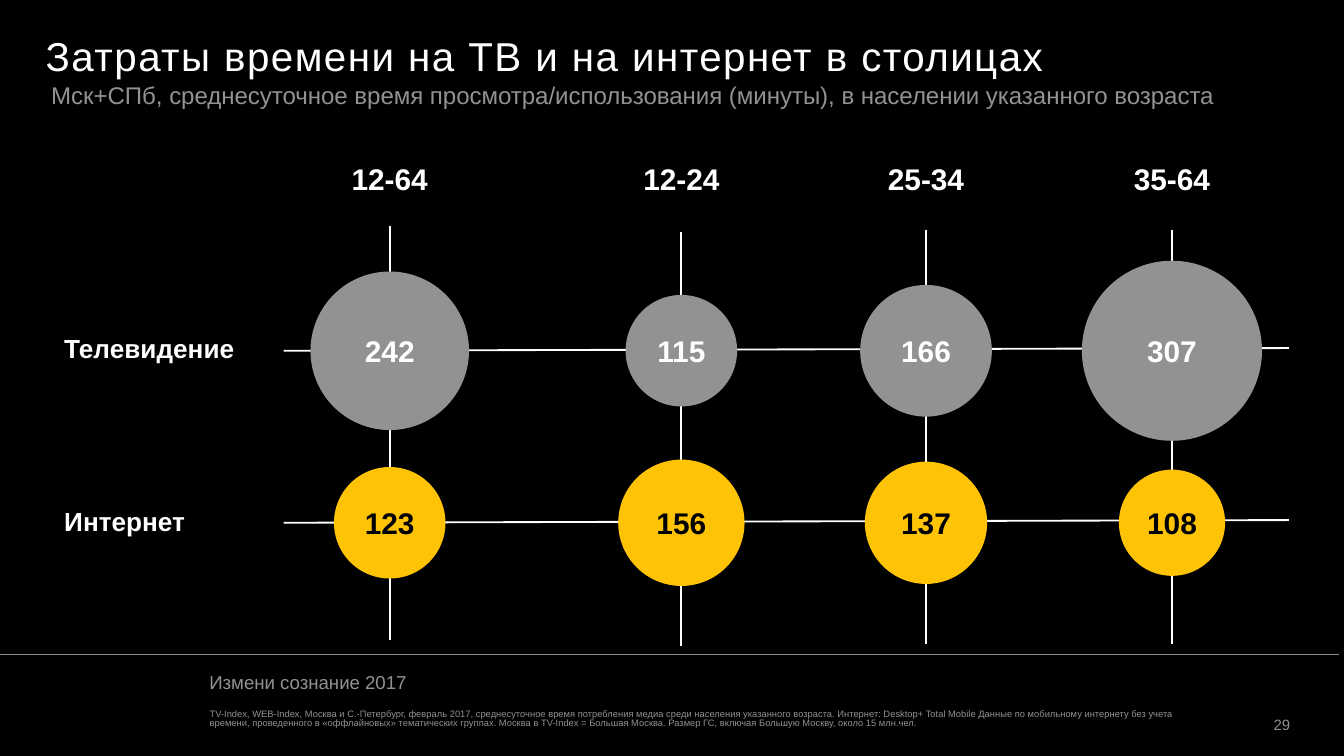
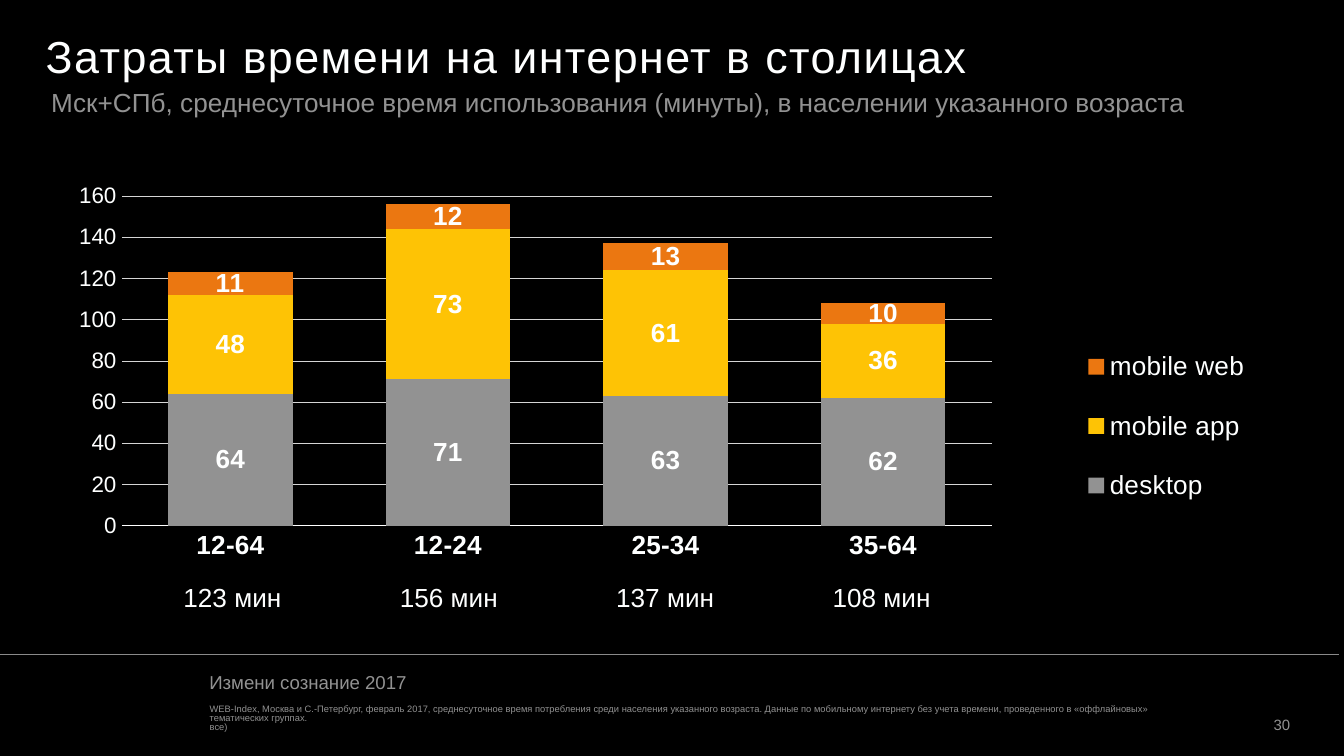
from dataclasses import dataclass

from lxml import etree
from pptx import Presentation
from pptx.chart.data import CategoryChartData
from pptx.dml.color import RGBColor
from pptx.enum.chart import XL_CHART_TYPE, XL_LABEL_POSITION, XL_LEGEND_POSITION, XL_TICK_MARK
from pptx.enum.shapes import MSO_CONNECTOR, MSO_SHAPE
from pptx.enum.text import MSO_ANCHOR, MSO_AUTO_SIZE, PP_ALIGN
from pptx.oxml.ns import qn
from pptx.util import Inches, Pt

LEFT, CENTER, RIGHT = PP_ALIGN.LEFT, PP_ALIGN.CENTER, PP_ALIGN.RIGHT
TOP, MIDDLE, BOTTOM = MSO_ANCHOR.TOP, MSO_ANCHOR.MIDDLE, MSO_ANCHOR.BOTTOM
NO_TICK = XL_TICK_MARK.NONE
COMPARISON_LAYOUT = 4
DEFAULT_INSETS = (0.1, 0.05, 0.1, 0.05)
NO_INSETS = (0, 0, 0, 0)


@dataclass(frozen=True)
class Theme:
    font: str = "Arial"
    black: str = "000000"
    white: str = "FEFFFF"
    gray: str = "929292"
    yellow: str = "FEC305"
    orange: str = "EB7711"
    footer_rule: str = "8A8A8A"
    grid: str = "D5D5D5"
    axis: str = "FFFFFF"
    source_size: float = 5
    number_size: float = 8
    footer_size: float = 10
    axis_size: float = 12
    label_size: float = 14
    value_size: float = 16


THEME = Theme()

AGES = ("12-64", "12-24", "25-34", "35-64")

# Column centre and top of its vertical line
COLUMNS = ((2.9, 1.68), (5.07, 1.73), (6.89, 1.71), (8.72, 1.71))
COLUMN_LENGTH = 3.08

# Name, label top, centre, circle fill, text colour, (minutes, diameter) by age
MEDIA_ROWS = (
    ("Телевидение", 2.45, 2.61, THEME.gray, THEME.white,
     ((242, 1.18), (115, 0.83), (166, 0.98), (307, 1.34))),
    ("Интернет", 3.74, 3.89, THEME.yellow, THEME.black,
     ((123, 0.83), (156, 0.94), (137, 0.91), (108, 0.79))),
)

DEVICES = (
    ("desktop", (64, 71, 63, 62), THEME.gray),
    ("mobile app", (48, 73, 61, 36), THEME.yellow),
    ("mobile web", (11, 12, 13, 10), THEME.orange),
)


def color(value):
    return RGBColor.from_string(value)


def set_layout(parent, index, x, y, width, height, inner=False):
    """Give a chart part a fixed place, in fractions of the chart."""
    for old in parent.findall(qn("c:layout")):
        parent.remove(old)
    layout = etree.Element(qn("c:layout"))
    manual = etree.SubElement(layout, qn("c:manualLayout"))
    entries = [("layoutTarget", "inner")] if inner else []
    entries += [("xMode", "edge"), ("yMode", "edge"),
                ("x", x), ("y", y), ("w", width), ("h", height)]
    for name, value in entries:
        etree.SubElement(manual, qn(f"c:{name}")).set("val", str(value))
    parent.insert(index, layout)


class Deck:
    def __init__(self, theme):
        self.theme = theme
        self.slide = None
        self.presentation = Presentation()
        self.presentation.slide_width = Inches(10)
        self.presentation.slide_height = Inches(5.625)
        background = self.presentation.slide_master.background.fill
        background.solid()
        background.fore_color.rgb = color(theme.black)

    def style_font(self, font, size, font_color, bold=False):
        font.name = self.theme.font
        font.size = Pt(size)
        font.bold = bold
        font.color.rgb = color(font_color)

    def fill_text(self, shape, text, size, font_color, bold=False, align=LEFT, anchor=TOP,
                  insets=DEFAULT_INSETS, indent=0, spacing=1.0, wrap=True):
        frame = shape.text_frame
        frame.text = text
        frame.auto_size = MSO_AUTO_SIZE.NONE
        frame.word_wrap = wrap
        frame.vertical_anchor = anchor
        (frame.margin_left, frame.margin_top,
         frame.margin_right, frame.margin_bottom) = map(Inches, insets)
        for paragraph in frame.paragraphs:
            properties = paragraph._p.get_or_add_pPr()
            properties.set("marL", str(Inches(indent)))
            properties.set("indent", "0")
            paragraph.alignment = align
            paragraph.line_spacing = spacing
            paragraph.space_before = Pt(0)
            self.style_font(paragraph.font, size, font_color, bold)

    def place(self, shape, left, top, width, height):
        shape.left, shape.top = Inches(left), Inches(top)
        shape.width, shape.height = Inches(width), Inches(height)

    def text(self, text, left, top, width, height, size, font_color, **options):
        box = self.slide.shapes.add_textbox(
            Inches(left), Inches(top), Inches(width), Inches(height))
        self.fill_text(box, text, size, font_color, **options)

    def line(self, start, end, line_color, width):
        connector = self.slide.shapes.add_connector(
            MSO_CONNECTOR.STRAIGHT, *map(Inches, (*start, *end)))
        connector.line.color.rgb = color(line_color)
        connector.line.width = Pt(width)
        etree.SubElement(connector._element.spPr, qn("a:effectLst"))

    def circle(self, text, center_x, center_y, diameter, fill, font_color):
        circle = self.slide.shapes.add_shape(
            MSO_SHAPE.OVAL, Inches(center_x - diameter / 2),
            Inches(center_y - diameter / 2), Inches(diameter), Inches(diameter))
        circle.shadow.inherit = False
        circle.fill.solid()
        circle.fill.fore_color.rgb = color(fill)
        circle.line.fill.background()
        self.fill_text(circle, text, self.theme.value_size, font_color, bold=True,
                       align=CENTER, anchor=MIDDLE, insets=NO_INSETS)

    def new_slide(self, number, title, title_size, subtitle, subtitle_size,
                  source, subtitle_spacing=1.0):
        theme = self.theme
        layout = self.presentation.slide_layouts[COMPARISON_LAYOUT]
        self.slide = self.presentation.slides.add_slide(layout)
        heading, subheading, content, note, extra = self.slide.placeholders
        for unused in (content, extra):
            unused._element.getparent().remove(unused._element)

        # Title and subtitle
        self.place(heading, 0, 0, 10, 0.59)
        self.fill_text(heading, title, title_size, theme.white, anchor=MIDDLE,
                       insets=(0.3, 0.23, 0.3, 0), indent=0.04)
        for run in heading.text_frame.paragraphs[0].runs:
            run._r.get_or_add_rPr().set("spc", "80")
        self.place(subheading, 0, 0.59, 10, 0.28)
        self.fill_text(subheading, subtitle, subtitle_size, theme.gray,
                       indent=0.28, spacing=subtitle_spacing)

        # Footer
        self.line((0, 4.87), (9.96, 4.87), theme.footer_rule, 0.25)
        self.text("Измени сознание 2017", 1.46, 4.96, 7.53, 0.23,
                  theme.footer_size, theme.gray, anchor=MIDDLE)
        self.place(note, 1.46, 5.19, 7.53, 0.32)
        self.fill_text(note, source, theme.source_size, theme.gray,
                       anchor=MIDDLE, spacing=0.8)
        self.text(str(number), 9.17, 5.23, 0.43, 0.23, theme.number_size, theme.gray,
                  align=RIGHT, anchor=BOTTOM, insets=NO_INSETS)

    def stacked_chart(self, categories, series_rows, left, top, width, height):
        theme = self.theme
        data = CategoryChartData()
        data.categories = categories
        for name, values, _ in series_rows:
            data.add_series(name, values)
        chart = self.slide.shapes.add_chart(
            XL_CHART_TYPE.COLUMN_STACKED, Inches(left), Inches(top),
            Inches(width), Inches(height), data).chart
        chart.has_title = False
        self.style_font(chart.font, theme.footer_size, theme.white)

        # Columns and their values
        plot = chart.plots[0]
        plot.gap_width = 75
        plot.overlap = 100
        plot.vary_by_categories = False
        for series, (_, _, fill) in zip(plot.series, series_rows):
            series.format.fill.solid()
            series.format.fill.fore_color.rgb = color(fill)
            labels = series.data_labels
            labels.show_value = True
            labels.position = XL_LABEL_POSITION.CENTER
            self.style_font(labels.font, theme.label_size, theme.white, bold=True)

        # Axes
        ages, minutes = chart.category_axis, chart.value_axis
        for axis in (ages, minutes):
            axis.major_tick_mark = axis.minor_tick_mark = NO_TICK
        self.style_font(ages.tick_labels.font, theme.label_size, theme.white, bold=True)
        ages.format.line.color.rgb = color(theme.axis)
        ages.format.line.width = Pt(0.75)
        self.style_font(minutes.tick_labels.font, theme.axis_size, theme.white)
        minutes.minimum_scale, minutes.maximum_scale = 0, 160
        minutes.major_unit = 20
        minutes.format.line.fill.background()
        minutes.major_gridlines.format.line.color.rgb = color(theme.grid)
        minutes.major_gridlines.format.line.width = Pt(0.25)

        # Legend and fixed places
        chart.has_legend = True
        chart.legend.position = XL_LEGEND_POSITION.RIGHT
        chart.legend.include_in_layout = False
        self.style_font(chart.legend.font, theme.label_size, theme.white)
        chart_space = plot._element.getroottree().getroot()
        set_layout(chart_space.find(".//" + qn("c:plotArea")), 0,
                   0.056, 0.132, 0.703, 0.649, inner=True)
        set_layout(chart_space.find(".//" + qn("c:legend")), 1,
                   0.81, 0.38, 0.18, 0.41)


def build_media_slide(deck):
    theme = deck.theme
    deck.new_slide(
        29, "Затраты времени на ТВ и на интернет в столицах", 21.6,
        "Мск+СПб, среднесуточное время просмотра/использования (минуты), "
        "в населении указанного возраста", 12.9,
        "TV-Index, WEB-Index, Москва и С.-Петербург, февраль 2017, среднесуточное время "
        "потребления медиа среди населения указанного возраста. Интернет: Desktop+ Total "
        "Mobile Данные по мобильному интернету без учета времени, проведенного в "
        "«оффлайновых» тематических группах. Москва в TV-Index = Большая Москва. "
        "Размер ГС, включая Большую Москву, около 15 млн.чел.",
        subtitle_spacing=0.8)

    # Grid of lines with age headings and media names
    for name, label_top, center, *_ in MEDIA_ROWS:
        deck.line((2.11, center), (9.59, center - 0.02), theme.white, 1)
        deck.text(name, 0.38, label_top, 1.47, 0.31, theme.label_size, theme.white,
                  bold=True, spacing=0.9, wrap=False)
    for age, (x, top) in zip(AGES, COLUMNS):
        deck.line((x, top + COLUMN_LENGTH), (x, top), theme.white, 1)
        deck.text(age, x - 0.8, 1.15, 1.6, 0.37, theme.value_size, theme.white,
                  bold=True, align=CENTER)

    # Circles at the crossings
    for _, _, center, fill, font_color, circles in MEDIA_ROWS:
        for (x, _), (minutes, diameter) in zip(COLUMNS, circles):
            deck.circle(str(minutes), x, center, diameter, fill, font_color)


def build_devices_slide(deck):
    theme = deck.theme
    deck.new_slide(
        30, "Затраты времени на интернет в столицах", 24,
        "Мск+СПб, среднесуточное время использования (минуты), "
        "в населении указанного возраста", 14,
        "WEB-Index, Москва и С.-Петербург, февраль 2017, среднесуточное время потребления "
        "среди населения указанного возраста. Данные по мобильному интернету без учета "
        "времени, проведенного в «оффлайновых» тематических группах.\nвсе)")
    deck.stacked_chart(AGES, DEVICES, 0.39, 0.96, 9.21, 3.78)

    # Total minutes under each column
    totals = map(sum, zip(*(values for _, values, _ in DEVICES)))
    for index, total in enumerate(totals):
        deck.text(f"{total} мин", 1.26 + 1.61 * index, 4.28, 0.94, 0.34,
                  theme.label_size, theme.white, align=CENTER, wrap=False)


def main():
    deck = Deck(THEME)
    build_media_slide(deck)
    build_devices_slide(deck)
    deck.presentation.save("out.pptx")


if __name__ == "__main__":
    main()
